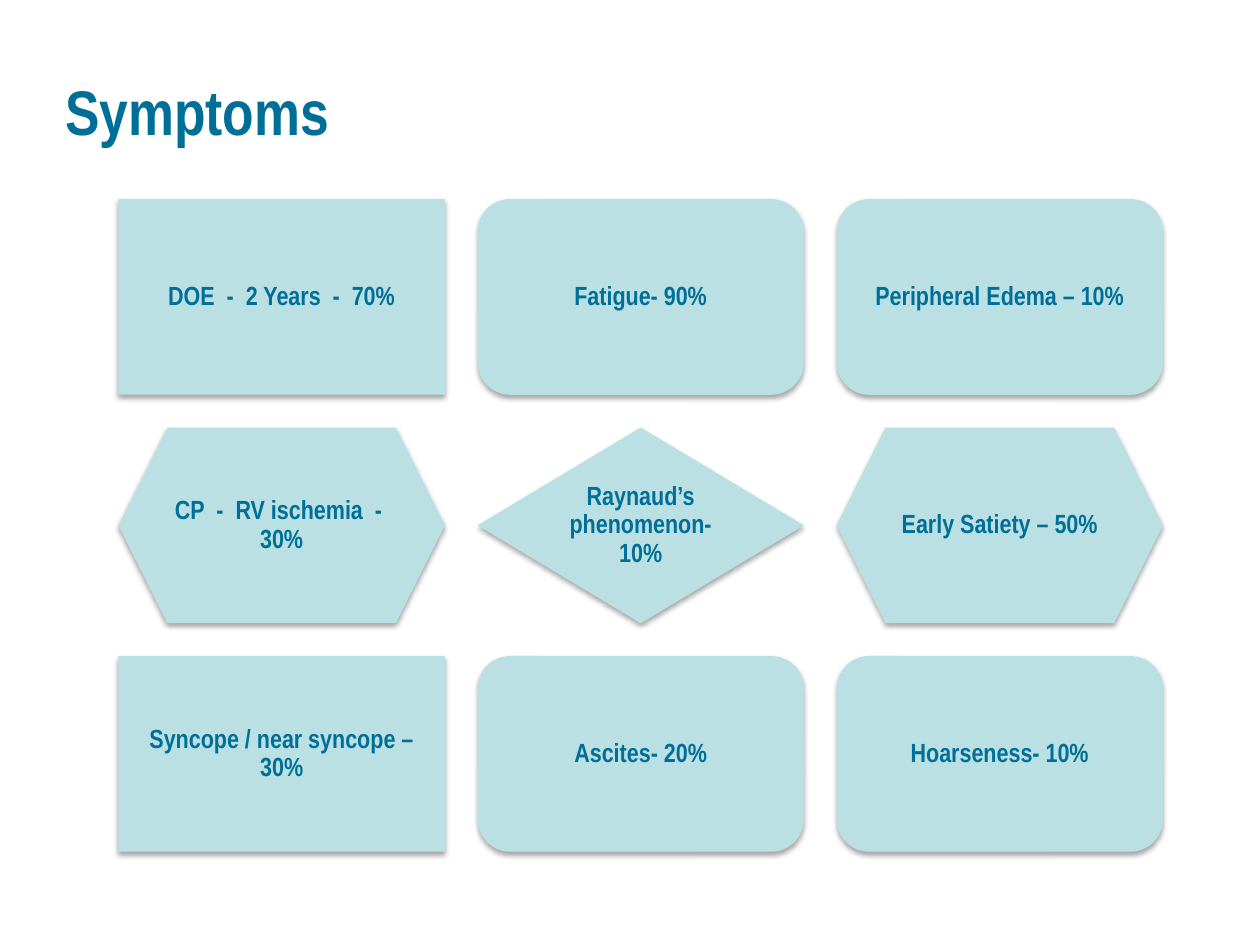
import pptx
import pptx.dml.color
import pptx.enum.shapes
import pptx.enum.text
import pptx.oxml
import pptx.oxml.ns
import pptx.util

Inches = pptx.util.Inches
Pt = pptx.util.Pt
SHAPE = pptx.enum.shapes.MSO_SHAPE
ALIGN = pptx.enum.text.PP_ALIGN
TEAL = pptx.dml.color.RGBColor(0x00, 0x6F, 0x97)
PALE = pptx.dml.color.RGBColor(0xBB, 0xE0, 0xE3)

SHADOW = (
    f'<a:effectLst {pptx.oxml.ns.nsdecls("a")}>'
    '<a:outerShdw blurRad="40000" dist="23000" dir="5400000" rotWithShape="0">'
    '<a:srgbClr val="000000"><a:alpha val="35000"/></a:srgbClr>'
    '</a:outerShdw></a:effectLst>'
)

SYMPTOMS = [
    [(SHAPE.RECTANGLE, "DOE  -  2 Years  -  70%"),
     (SHAPE.ROUNDED_RECTANGLE, "Fatigue- 90%"),
     (SHAPE.ROUNDED_RECTANGLE, "Peripheral Edema – 10%")],
    [(SHAPE.HEXAGON, "CP  -  RV ischemia  -  30%"),
     (SHAPE.DIAMOND, "Raynaud’s phenomenon- 10%"),
     (SHAPE.HEXAGON, "Early Satiety – 50%")],
    [(SHAPE.RECTANGLE, "Syncope / near syncope – 30%"),
     (SHAPE.ROUNDED_RECTANGLE, "Ascites- 20%"),
     (SHAPE.ROUNDED_RECTANGLE, "Hoarseness- 10%")],
]


def write_text(s, text, size, align):
    """Write one bold, vertically centred paragraph into a shape."""
    tf = s.text_frame
    tf.word_wrap = True
    tf.vertical_anchor = pptx.enum.text.MSO_ANCHOR.MIDDLE
    p = tf.paragraphs[0]
    p.alignment = align
    r = p.add_run()
    r.text = text
    font = {"name": "Arial Narrow", "size": Pt(size), "bold": True}
    for name, value in font.items():
        setattr(r.font, name, value)
    r.font.color.rgb = TEAL
    return tf


def add_title(slide, left, top, width, height):
    """Place the slide title in the given box."""
    s = slide.shapes.add_textbox(left, top, width, height)
    write_text(s, "Symptoms", 36, ALIGN.LEFT)


def add_symptom(slide, kind, text, left, top, width, height):
    """Place one shadowed symptom shape in the given box."""
    s = slide.shapes.add_shape(kind, left, top, width, height)
    s.fill.solid()
    s.fill.fore_color.rgb = PALE
    s.line.fill.background()
    s._element.spPr.append(pptx.oxml.parse_xml(SHADOW))
    tf = write_text(s, text, 15, ALIGN.CENTER)
    tf.paragraphs[0].line_spacing = 0.9
    for side in ("left", "top", "right", "bottom"):
        setattr(tf, f"margin_{side}", Inches(0.06))


def add_symptom_grid(slide, left, top, width, height, gap):
    """Fill the given box with equally spaced symptom shapes."""
    rows, cols = len(SYMPTOMS), len(SYMPTOMS[0])
    w = (width - gap * (cols - 1)) // cols
    h = (height - gap * (rows - 1)) // rows
    for i, row in enumerate(SYMPTOMS):
        for j, (kind, text) in enumerate(row):
            add_symptom(slide, kind, text, left + j * (w + gap), top + i * (h + gap), w, h)


def main():
    """Build the symptoms slide."""
    prs = pptx.Presentation()
    prs.slide_width, prs.slide_height = Inches(10), Inches(7.5)
    slide = prs.slides.add_slide(prs.slide_layouts[6])
    add_title(slide, Inches(0.42), Inches(0.25), Inches(9.33), Inches(1.25))
    add_symptom_grid(slide, Inches(0.94), Inches(1.58), Inches(8.29), Inches(5.18), Inches(0.26))
    prs.save("out.pptx")


if __name__ == "__main__":
    main()
